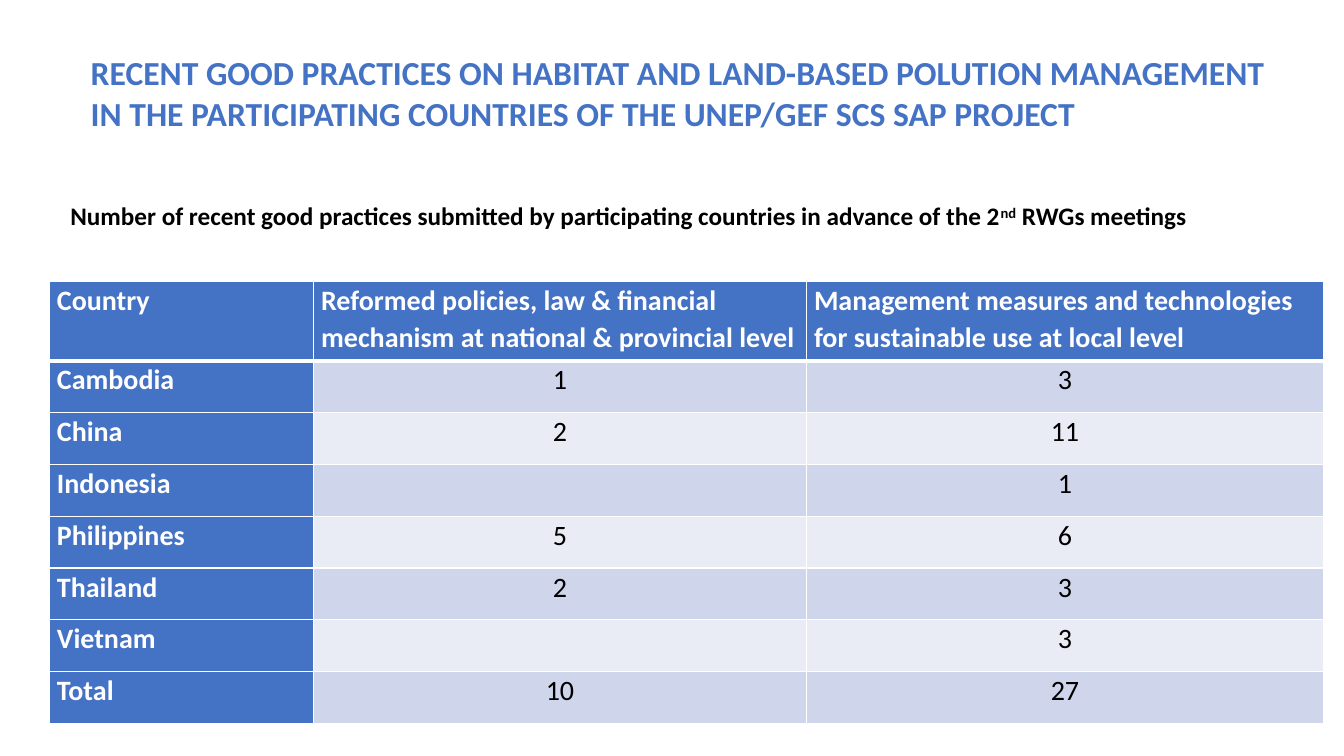
from lxml import etree
from pptx import Presentation
from pptx import util as u
from pptx.dml.color import RGBColor
from pptx.enum import text as t
from pptx.oxml import ns

Pt = u.Pt
BLUE = RGBColor(0x44, 0x72, 0xC4)
DARK = RGBColor(0xCF, 0xD5, 0xEA)
LIGHT = RGBColor(0xE9, 0xEB, 0xF5)
WHITE = RGBColor(0xFF, 0xFF, 0xFF)
BLACK = RGBColor(0, 0, 0)

TITLE = ("RECENT GOOD PRACTICES ON HABITAT AND LAND-BASED POLUTION MANAGEMENT "
         "IN THE PARTICIPATING COUNTRIES OF THE UNEP/GEF SCS SAP PROJECT")
NOTE = [("Number of recent good practices submitted by participating countries "
         "in advance of the 2", 0), ("nd", 30000), (" RWGs meetings", 0)]
ROWS = [
    ("Country",
     "Reformed policies, law & financial mechanism at national & provincial level",
     "Management measures and technologies for sustainable use at local level"),
    ("Cambodia", "1", "3"),
    ("China", "2", "11"),
    ("Indonesia", "", "1"),
    ("Philippines", "5", "6"),
    ("Thailand", "2", "3"),
    ("Vietnam", "", "3"),
    ("Total", "10", "27"),
]
WIDTHS = (188.7, 352.1, 369.4)
HEAD, BODY = 56.9, 37


def write(frame, runs, size=18, color=BLACK, bold=True,
          align=t.PP_ALIGN.LEFT, line=None, after=0):
    para = frame.paragraphs[0]
    para.alignment = align
    para.space_before, para.space_after = Pt(0), Pt(after)
    if line:
        para.line_spacing = line
    for words, lift in runs:
        run = para.add_run()
        run.text = words
        font = run.font
        font.name, font.size, font.bold = "Calibri", Pt(size), bold
        font.color.rgb = color
        if lift:
            font._element.set("baseline", str(lift))


def place(shape, left, top, width, height):
    shape.left, shape.top = Pt(left), Pt(top)
    shape.width, shape.height = Pt(width), Pt(height)
    frame = shape.text_frame
    frame.word_wrap = True
    frame.vertical_anchor = t.MSO_ANCHOR.TOP
    frame.auto_size = t.MSO_AUTO_SIZE.SHAPE_TO_FIT_TEXT
    return frame


def edge(cell, **widths):
    props = cell._tc.get_or_add_tcPr()
    for side in "LRTB":
        line = etree.SubElement(props, ns.qn(f"a:ln{side}"),
                                w=str(Pt(widths.get(side, 1))))
        fill = etree.SubElement(line, ns.qn("a:solidFill"))
        etree.SubElement(fill, ns.qn("a:srgbClr"), val=str(WHITE))


def fill_cell(cell, words, row, col):
    label = row == 0 or col == 0
    edge(cell, T=3 if row == 1 else 1, B=3 if row == 0 else 1)
    cell.fill.solid()
    cell.fill.fore_color.rgb = BLUE if label else DARK if row % 2 else LIGHT
    cell.margin_left = cell.margin_right = Pt(5.4)
    cell.margin_top = cell.margin_bottom = Pt(0)
    if words:
        write(cell.text_frame, [(words, 0)], size=20, bold=label,
              color=WHITE if label else BLACK, line=1.07, after=8,
              align=t.PP_ALIGN.LEFT if label else t.PP_ALIGN.CENTER)


def add_grid(slide, left, top):
    height = HEAD + BODY * (len(ROWS) - 1)
    table = slide.shapes.add_table(len(ROWS), len(WIDTHS), Pt(left), Pt(top),
                                   Pt(sum(WIDTHS)), Pt(height)).table
    table.first_col = True
    for col, width in enumerate(WIDTHS):
        table.columns[col].width = Pt(width)
    for row, cells in enumerate(ROWS):
        table.rows[row].height = Pt(BODY if row else HEAD)
        for col, words in enumerate(cells):
            fill_cell(table.cell(row, col), words, row, col)


def main():
    deck = Presentation()
    deck.slide_width, deck.slide_height = Pt(960), Pt(540)
    slide = deck.slides.add_slide(deck.slide_layouts[5])
    title = place(slide.shapes.title, 57.6, 33.8, 866.2, 65.5)
    write(title, [(TITLE, 0)], size=24, color=BLUE)
    add_grid(slide, 35.3, 200.9)
    note = slide.shapes.add_textbox(0, 0, 0, 0)
    write(place(note, 43.2, 139.7, 855.4, 28.8), NOTE)
    deck.save("out.pptx")


if __name__ == "__main__":
    main()
